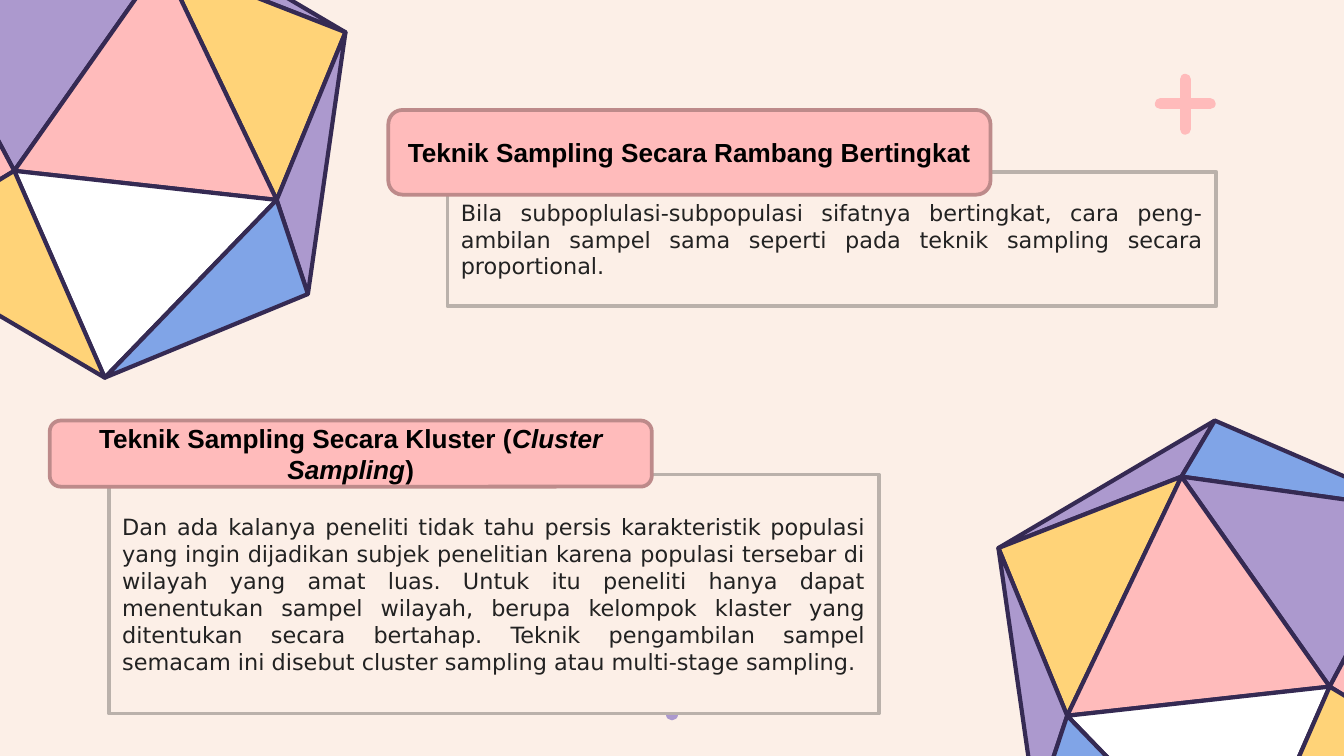
from lxml.etree import SubElement
from pptx import Presentation
from pptx.dml.color import RGBColor
from pptx.enum.shapes import MSO_CONNECTOR, MSO_SHAPE
from pptx.enum.text import MSO_ANCHOR, PP_ALIGN
from pptx.oxml.ns import qn
from pptx.util import Cm, Pt

PAGE_WIDTH, PAGE_HEIGHT = 25.4, 14.29
CREAM, PINK, PURPLE, YELLOW = "FCEFE7", "FFBBBB", "AC99CE", "FFD378"
BLUE, WHITE, INK = "80A4E7", "FFFFFF", "352A53"


def color(hex_string):
    return RGBColor.from_string(hex_string)


def style(shape, fill, line, width):
    shape.shadow.inherit = False
    shape.fill.solid()
    shape.fill.fore_color.rgb = color(fill)
    shape.line.color.rgb = color(line)
    shape.line.width = Pt(width)


deck = Presentation()
deck.slide_width, deck.slide_height = Cm(PAGE_WIDTH), Cm(PAGE_HEIGHT)
page = deck.slides.add_slide(deck.slide_layouts[6])
page.background.fill.solid()
page.background.fill.fore_color.rgb = color(CREAM)

# Plus sign and dot, as thick strokes with round ends
strokes = [
    (22.4, 1.5, 22.4, 2.44, PINK),
    (21.93, 1.96, 22.87, 1.96, PINK),
    (12.7, 12.6, 12.7, 13.51, PURPLE),
]
for x1, y1, x2, y2, stroke_color in strokes:
    stroke = page.shapes.add_connector(
        MSO_CONNECTOR.STRAIGHT, Cm(x1), Cm(y1), Cm(x2), Cm(y2))
    stroke.line.color.rgb = color(stroke_color)
    stroke.line.width = Pt(6)
    stroke.line._get_or_add_ln().set("cap", "rnd")
    SubElement(stroke._element.spPr, qn("a:effectLst"))

# Two polyhedra: the second is the first mirrored and moved down
corners = {
    "top": (2.44, -1.8), "peak": (3.07, -0.74), "right": (6.53, 0.61),
    "hub": (5.23, 3.78), "low": (5.82, 5.56), "bottom": (1.98, 7.14),
    "inner": (0.27, 3.23), "outer": (-1.5, -0.1), "far": (-2.16, 4.7),
}
faces = [
    ("top peak right", PURPLE),
    ("top outer peak", BLUE),
    ("peak hub right", YELLOW),
    ("right hub low", PURPLE),
    ("peak outer inner", PURPLE),
    ("peak inner hub", PINK),
    ("outer far inner", PINK),
    ("inner bottom hub", WHITE),
    ("hub bottom low", BLUE),
    ("inner far bottom", YELLOW),
]
for mirrored in (False, True):
    for names, fill in faces:
        points = [corners[name] for name in names.split()]
        if mirrored:
            points = [(PAGE_WIDTH - x, y + 9.75) for x, y in points]
        if max(y for x, y in points) < 0:
            continue  # this face lies wholly above the page
        start, *others = [(Cm(x), Cm(y)) for x, y in points]
        builder = page.shapes.build_freeform(*start)
        builder.add_line_segments(others, close=True)
        face = builder.convert_to_shape()
        style(face, fill, INK, 2.25)
        SubElement(face.line._get_or_add_ln(), qn("a:round"))

# Each text panel is followed by the heading that overlaps it.
# Runs are (text, italic).
panels = [
    (8.46, 3.25, 14.53, 2.54, False, [
        ("Bila subpoplulasi-subpopulasi sifatnya bertingkat, cara "
         "peng-ambilan sampel sama seperti pada teknik sampling secara "
         "proportional.", False)]),
    (7.34, 2.08, 11.38, 1.6, True, [
        ("Teknik Sampling Secara Rambang Bertingkat", False)]),
    (2.06, 8.97, 14.55, 4.52, False, [
        ("Dan ada kalanya peneliti tidak tahu persis karakteristik populasi "
         "yang ingin dijadikan subjek penelitian karena populasi tersebar di "
         "wilayah yang amat luas. Untuk itu peneliti hanya dapat menentukan "
         "sampel wilayah, berupa kelompok klaster yang ditentukan secara "
         "bertahap. Teknik pengambilan sampel semacam ini disebut cluster "
         "sampling atau multi-stage sampling.", False)]),
    (0.94, 7.95, 11.38, 1.25, True, [
        ("Teknik Sampling Secara Kluster (", False),
        ("Cluster Sampling", True),
        (")", False)]),
]
for left, top, width, height, heading, runs in panels:
    kind = MSO_SHAPE.ROUNDED_RECTANGLE if heading else MSO_SHAPE.RECTANGLE
    box = page.shapes.add_shape(kind, Cm(left), Cm(top), Cm(width), Cm(height))
    style(box, PINK if heading else CREAM, "BD8A8A" if heading else "BAB1AB", 2)
    box.text_frame.word_wrap = True
    box.text_frame.vertical_anchor = MSO_ANCHOR.MIDDLE
    para = box.text_frame.paragraphs[0]
    para.alignment = PP_ALIGN.CENTER if heading else PP_ALIGN.JUSTIFY
    para.font.name = "Arial" if heading else "DejaVu Sans"
    para.font.size = Pt(14 if heading else 12)
    para.font.bold = heading
    para.font.color.rgb = color("000000" if heading else "222222")
    for text, italic in runs:
        span = para.add_run()
        span.text = text
        if italic:
            span.font.italic = True

deck.save("out.pptx")
